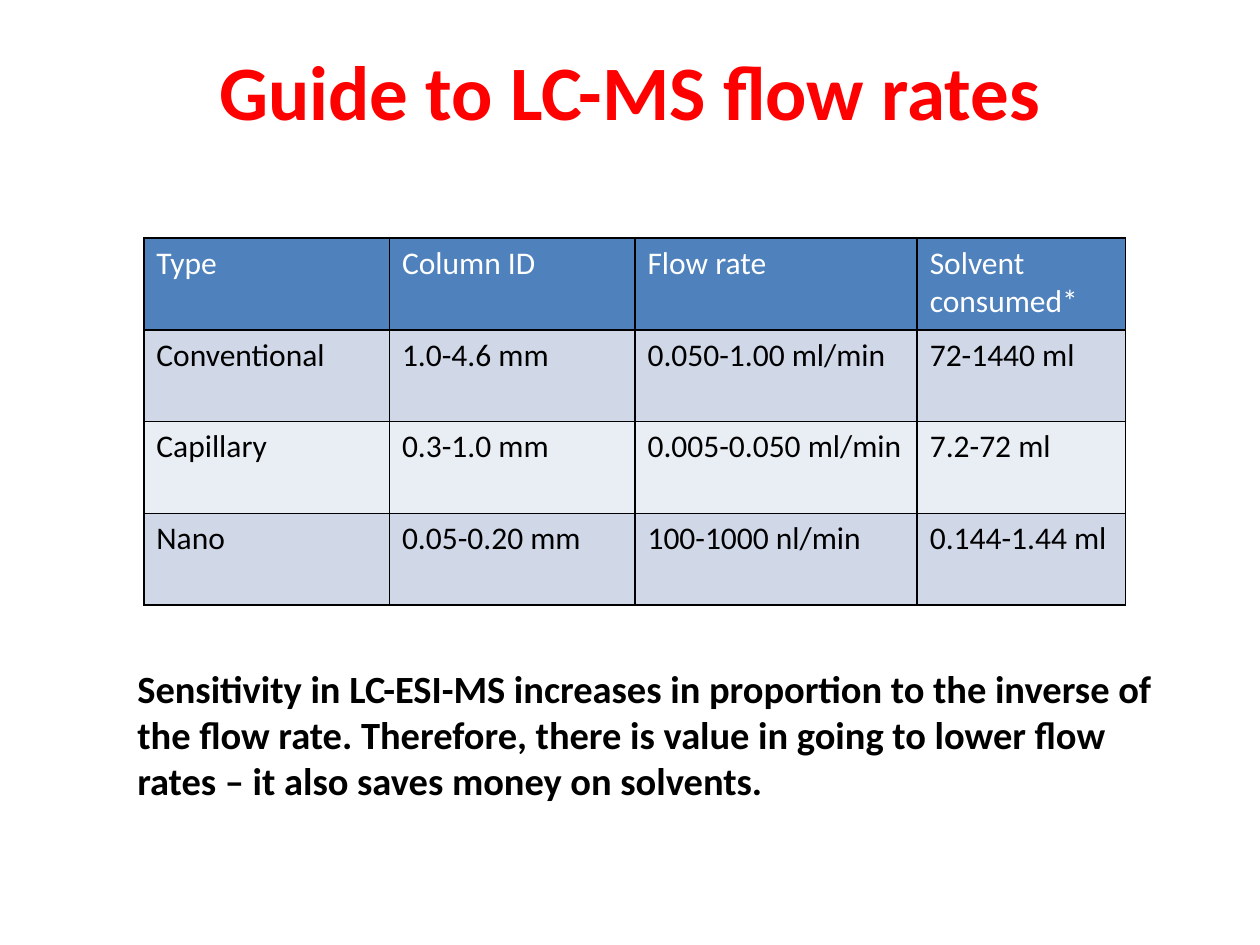
from lxml.etree import SubElement
from pptx import Presentation
from pptx.dml.color import RGBColor
from pptx.enum.text import MSO_ANCHOR, MSO_AUTO_SIZE, PP_ALIGN
from pptx.oxml.ns import qn
from pptx.util import Cm, Pt


def write_text(text_frame, text, size=18, color="000000", bold=False, align=PP_ALIGN.LEFT):
    text_frame.word_wrap = True
    paragraph = text_frame.paragraphs[0]
    paragraph.alignment = align
    run = paragraph.add_run()
    run.text = text
    run.font.name = "Calibri"
    run.font.size = Pt(size)
    run.font.bold = bold
    run.font.color.rgb = RGBColor.from_string(color)


def format_cell(cell, fill, border="000000"):
    """Fill the cell and draw a 1 pt line on all four sides."""
    properties = cell._tc.get_or_add_tcPr()
    for side in ("lnL", "lnR", "lnT", "lnB"):
        line = SubElement(properties, qn(f"a:{side}"), w=str(Pt(1)))
        SubElement(SubElement(line, qn("a:solidFill")), qn("a:srgbClr"), val=border)
    cell.fill.solid()
    cell.fill.fore_color.rgb = RGBColor.from_string(fill)


presentation = Presentation()
presentation.slide_width = Cm(25.4)
presentation.slide_height = Cm(19.05)
slide = presentation.slides.add_slide(presentation.slide_layouts[5])

# Title
title = slide.shapes.title
title.left, title.top, title.width, title.height = Cm(1.27), Cm(0.76), Cm(22.86), Cm(3.18)
title.text_frame.vertical_anchor = MSO_ANCHOR.TOP
write_text(title.text_frame, "Guide to LC-MS flow rates", size=44, color="FF0000",
           bold=True, align=PP_ALIGN.CENTER)

# Flow rate table
flow_rates = [
    ("Type", "Column ID", "Flow rate", "Solvent consumed*"),
    ("Conventional", "1.0-4.6 mm", "0.050-1.00 ml/min", "72-1440 ml"),
    ("Capillary", "0.3-1.0 mm", "0.005-0.050 ml/min", "7.2-72 ml"),
    ("Nano", "0.05-0.20 mm", "100-1000 nl/min", "0.144-1.44 ml"),
]
column_widths = [4.95, 4.95, 5.69, 4.2]
row_height = 1.85
table = slide.shapes.add_table(
    len(flow_rates), len(column_widths), Cm(2.9), Cm(4.8),
    Cm(sum(column_widths)), Cm(row_height * len(flow_rates))).table
for column, width in zip(table.columns, column_widths):
    column.width = Cm(width)

for row_index, values in enumerate(flow_rates):
    table.rows[row_index].height = Cm(row_height)
    if row_index == 0:
        fill, color = "4F81BD", "FFFFFF"
    else:
        fill, color = ("D0D8E8" if row_index % 2 else "E9EDF4"), "000000"
    for column_index, value in enumerate(values):
        cell = table.cell(row_index, column_index)
        format_cell(cell, fill)
        write_text(cell.text_frame, value, color=color)

# Conclusion
conclusion = slide.shapes.add_textbox(Cm(2.52), Cm(13.28), Cm(21.46), Cm(3.07))
conclusion.text_frame.auto_size = MSO_AUTO_SIZE.SHAPE_TO_FIT_TEXT
write_text(
    conclusion.text_frame,
    "Sensitivity in LC-ESI-MS increases in proportion to the inverse of the flow rate. "
    "Therefore, there is value in going to lower flow rates – it also saves money on solvents.",
    size=22, bold=True)

presentation.save("out.pptx")
